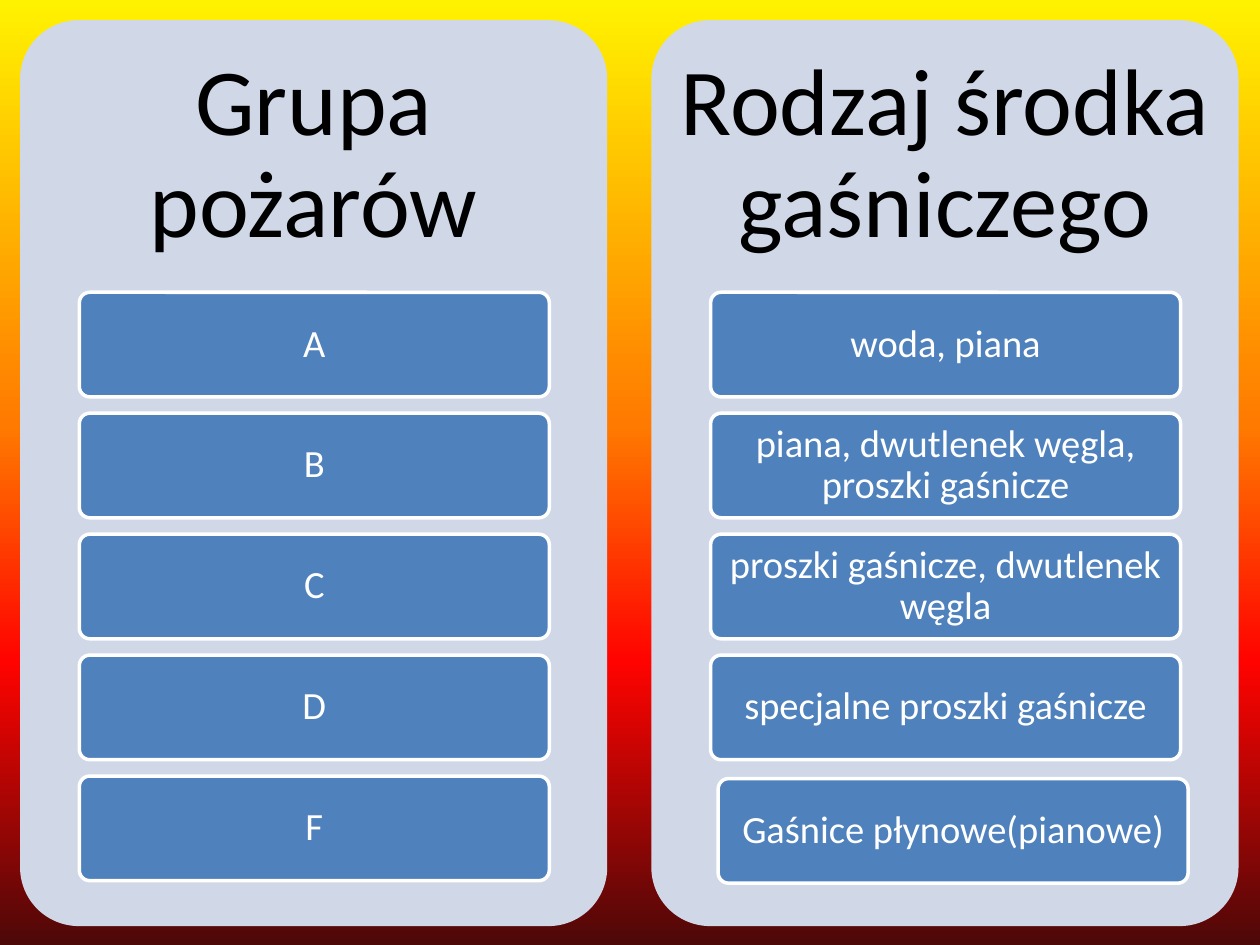
from lxml.etree import SubElement
from pptx import Presentation
from pptx.dml.color import RGBColor
from pptx.enum.shapes import MSO_SHAPE
from pptx.enum.text import MSO_ANCHOR, PP_ALIGN
from pptx.oxml.ns import qn
from pptx.util import Inches, Pt

COLORS = {"panel": "D0D8E8", "tile": "4F81BD", "white": "FFFFFF", "black": "000000"}
FLAMES = [(0, "FFF200"), (45, "FF7A00"), (70, "FF0300"), (100, "4D0808")]
COLUMNS = [
    ("Grupa pożarów", ["A", "B", "C", "D", "F"], (0, 0)),
    (
        "Rodzaj środka gaśniczego",
        [
            "woda, piana",
            "piana, dwutlenek węgla, proszki gaśnicze",
            "proszki gaśnicze, dwutlenek węgla",
            "specjalne proszki gaśnicze",
            "Gaśnice płynowe(pianowe)",
        ],
        (0.06, 0.02),
    ),
]
PANEL_LEFT, PANEL_TOP, PANEL_WIDTH, PANEL_HEIGHT, PANEL_STEP = 0.16, 0.16, 4.66, 7.19, 5.01
HEADING_HEIGHT = 2.16
TILE_INDENT, TILE_WIDTH, TILE_HEIGHT, TILE_STEP = 0.47, 3.73, 0.83, 0.96


def paint_background(page):
    """Fill the page with a vertical flame gradient."""
    fill = page.background.fill
    fill.gradient()
    fill.gradient_angle = 270
    stops = page.element.find(".//" + qn("a:gsLst"))
    stops.clear()
    for percent, color in FLAMES:
        stop = SubElement(stops, qn("a:gs"), pos=str(percent * 1000))
        SubElement(stop, qn("a:srgbClr"), val=color)


def write_text(box, text, size, color, margins):
    """Set centred, wrapped text in a box with the given side and end margins."""
    frame = box.text_frame
    frame.text = text
    frame.word_wrap = True
    frame.vertical_anchor = MSO_ANCHOR.MIDDLE
    frame.margin_left = frame.margin_right = Inches(margins[0])
    frame.margin_top = frame.margin_bottom = Inches(margins[1])
    para = frame.paragraphs[0]
    para.alignment = PP_ALIGN.CENTER
    para.line_spacing = 0.9
    font = para.runs[0].font
    font.name = "Calibri"
    font.size = Pt(size)
    font.color.rgb = RGBColor.from_string(COLORS[color])


def add_rounded(page, left, top, width, height, color):
    """Add a flat rounded rectangle without an outline."""
    box = page.shapes.add_shape(
        MSO_SHAPE.ROUNDED_RECTANGLE, Inches(left), Inches(top), Inches(width), Inches(height)
    )
    box.adjustments[0] = 0.1
    box.shadow.inherit = False
    box.fill.solid()
    box.fill.fore_color.rgb = RGBColor.from_string(COLORS[color])
    box.line.fill.background()
    return box


def add_tile(page, left, top, text):
    """Add one outlined tile with its label."""
    tile = add_rounded(page, left, top, TILE_WIDTH, TILE_HEIGHT, "tile")
    tile.line.color.rgb = RGBColor.from_string(COLORS["white"])
    tile.line.width = Pt(2)
    write_text(tile, text, 22, "white", (0.06, 0.05))


def add_column(page, left, top, heading, labels, last_shift):
    """Add a panel with a heading and tiles, the last tile shifted."""
    add_rounded(page, left, top, PANEL_WIDTH, PANEL_HEIGHT, "panel")
    title = page.shapes.add_textbox(
        Inches(left), Inches(top), Inches(PANEL_WIDTH), Inches(HEADING_HEIGHT)
    )
    write_text(title, heading, 54, "black", (0.23, 0.23))
    for row, label in enumerate(labels):
        shift_x, shift_y = last_shift if row == len(labels) - 1 else (0, 0)
        tile_top = top + HEADING_HEIGHT + row * TILE_STEP
        add_tile(page, left + TILE_INDENT + shift_x, tile_top + shift_y, label)


def main():
    """Build the slide and save the deck."""
    deck = Presentation()
    deck.slide_width, deck.slide_height = Inches(10), Inches(7.5)
    page = deck.slides.add_slide(deck.slide_layouts[6])
    paint_background(page)
    for index, (heading, labels, last_shift) in enumerate(COLUMNS):
        left = PANEL_LEFT + index * PANEL_STEP
        add_column(page, left, PANEL_TOP, heading, labels, last_shift)
    deck.save("out.pptx")


if __name__ == "__main__":
    main()
